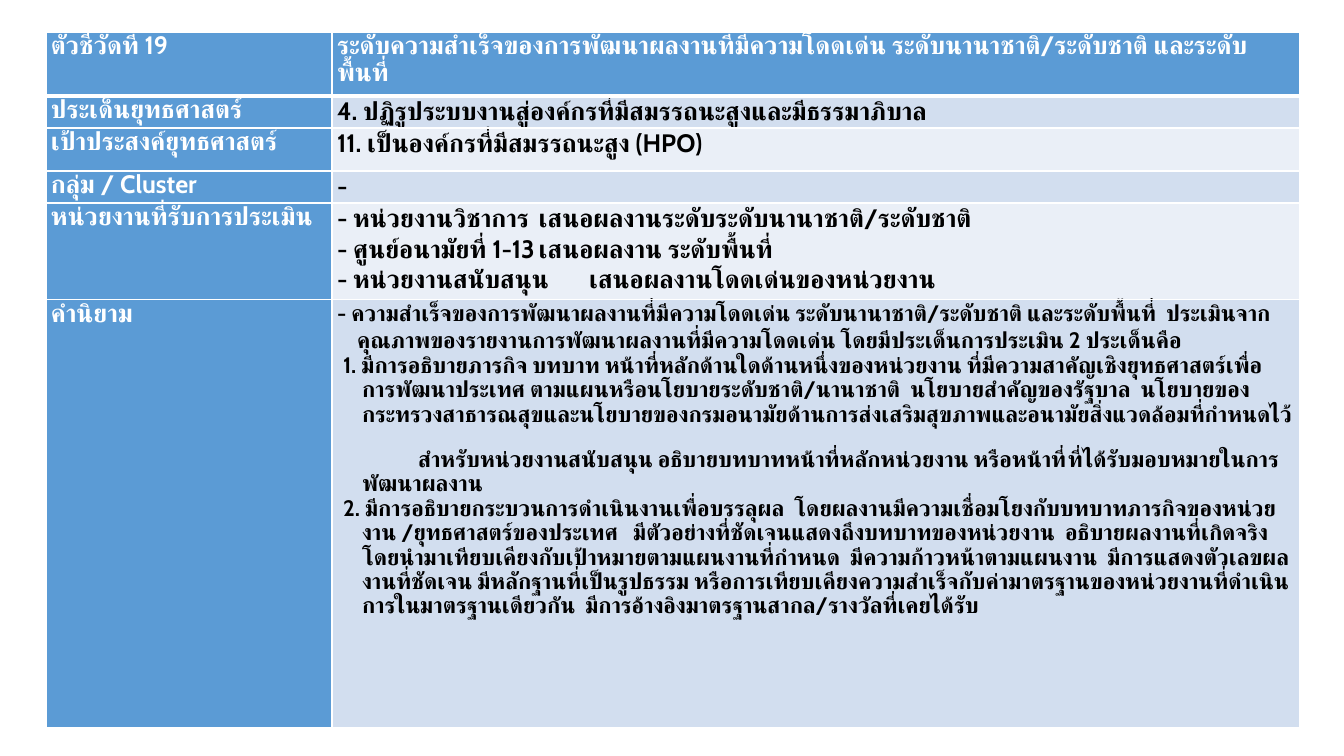
from lxml import etree
from pptx import Presentation
from pptx import util as u
from pptx.dml.color import RGBColor
from pptx.oxml.ns import qn

EMU_PER_PX = 914400 / 100.8
WHITE, BLACK, BLUE = "FFFFFF", "000000", "5B9BD5"
BANDS = ["D2DEEF", "EAEFF7"]

COLUMN_WIDTHS = [286, 967]
ROW_HEIGHTS = [64, 32, 43, 32, 97, 428]

# Each paragraph is its text, then any layout that differs from the plain one.
INDICATOR = [
    ("ตัวชี้วัดที่ 19", [
        ("ระดับความสำเร็จของการพัฒนาผลงานที่มีความโดดเด่น ระดับนานาชาติ/ระดับชาติ และระดับพื้นที่", {"line": 0.9})]),
    ("ประเด็นยุทธศาสตร์", [
        ("4. ปฏิรูประบบงานสู่องค์กรที่มีสมรรถนะสูงและมีธรรมาภิบาล", {})]),
    ("เป้าประสงค์ยุทธศาสตร์", [("11. เป็นองค์กรที่มีสมรรถนะสูง (HPO)", {})]),
    ("กลุ่ม / Cluster", [("-", {})]),
    ("หน่วยงานที่รับการประเมิน", [
        ("- หน่วยงานวิชาการ\tเสนอผลงานระดับระดับนานาชาติ/ระดับชาติ", {"tab": 228}),
        ("- ศูนย์อนามัยที่ 1-13\tเสนอผลงาน ระดับพื้นที่", {"tab": 216}),
        ("- หน่วยงานสนับสนุน\tเสนอผลงานโดดเด่นของหน่วยงาน", {"tab": 233})]),
    ("คำนิยาม", [
        ("- ความสำเร็จของการพัฒนาผลงานที่มีความโดดเด่น ระดับนานาชาติ/ระดับชาติ และระดับพื้นที่  "
         "ประเมินจากคุณภาพของรายงานการพัฒนาผลงานที่มีความโดดเด่น โดยมีประเด็นการประเมิน 2 ประเด็นคือ",
         {"size": 16, "margin": 20, "indent": -20}),
        ("1. มีการอธิบายภารกิจ บทบาท หน้าที่หลักด้านใดด้านหนึ่งของหน่วยงาน ที่มีความสาคัญเชิงยุทธศาสตร์"
         "เพื่อการพัฒนาประเทศ ตามแผนหรือนโยบายระดับชาติ/นานาชาติ  นโยบายสำคัญของรัฐบาล  "
         "นโยบายของกระทรวงสาธารณสุขและนโยบายของกรมอนามัยด้านการส่งเสริมสุขภาพ"
         "และอนามัยสิ่งแวดล้อมที่กำหนดไว้",
         {"size": 16, "margin": 25, "indent": -19, "line": 0.9}),
        ("สำหรับหน่วยงานสนับสนุน อธิบายบทบาทหน้าที่หลักหน่วยงาน หรือหน้าที่\t"
         "ที่ได้รับมอบหมายในการพัฒนาผลงาน",
         {"size": 16, "margin": 25, "indent": 56, "tab": 771, "line": 0.9, "before": 15}),
        ("2. มีการอธิบายกระบวนการดำเนินงานเพื่อบรรลุผล  โดยผลงานมีความเชื่อมโยงกับบทบาทภารกิจ"
         "ของหน่วยงาน /ยุทธศาสตร์ของประเทศ   มีตัวอย่างที่ชัดเจนแสดงถึงบทบาทของหน่วยงาน  "
         "อธิบายผลงานที่เกิดจริงโดยนำมาเทียบเคียงกับเป้าหมายตามแผนงานที่กำหนด  "
         "มีความก้าวหน้าตามแผนงาน  มีการแสดงตัวเลขผลงานที่ชัดเจน มีหลักฐานที่เป็นรูปธรรม "
         "หรือการเทียบเคียงความสำเร็จกับค่ามาตรฐานของหน่วยงานที่ดำเนินการในมาตรฐานเดียวกัน  "
         "มีการอ้างอิงมาตรฐานสากล/รางวัลที่เคยได้รับ",
         {"size": 16, "margin": 25, "indent": -19, "line": 0.9})]),
]


def px(length):
    return u.Emu(round(length * EMU_PER_PX))


def rgb(color):
    return RGBColor.from_string(color)


class SlideBuilder:
    def __init__(self, slide, font):
        self.slide = slide
        self.font = font

    def table(self, left, top, widths, heights):
        frame = self.slide.shapes.add_table(
            len(heights), len(widths), px(left), px(top), px(sum(widths)), px(sum(heights)))
        grid = frame.table
        for column, width in zip(grid.columns, widths):
            column.width = px(width)
        for row, height in zip(grid.rows, heights):
            row.height = px(height)
        return grid

    def cell(self, cell, paragraphs, fill, color, bottom=1):
        cell.margin_left = cell.margin_right = px(5)
        cell.margin_top = cell.margin_bottom = 0
        self.borders(cell, bottom)
        cell.fill.solid()
        cell.fill.fore_color.rgb = rgb(fill)
        frame = cell.text_frame
        for number, (wording, layout) in enumerate(paragraphs):
            paragraph = frame.add_paragraph() if number else frame.paragraphs[0]
            self.paragraph(paragraph, wording, color, **layout)

    def borders(self, cell, bottom):
        properties = cell._tc.get_or_add_tcPr()
        for side, points in (("L", 1), ("R", 1), ("T", 1), ("B", bottom)):
            line = etree.SubElement(properties, qn(f"a:ln{side}"), w=str(u.Pt(points)))
            fill = etree.SubElement(line, qn("a:solidFill"))
            etree.SubElement(fill, qn("a:srgbClr"), val=WHITE)

    def paragraph(self, paragraph, wording, color, size=18, margin=0, indent=0,
                  tab=None, line=None, before=0):
        """Write one paragraph; margin, indent and tab are px, before is points."""
        run = paragraph.add_run()
        run.text = wording
        paragraph.line_spacing = line
        paragraph.space_before = u.Pt(before)
        font = paragraph.font
        font.name, font.size, font.bold = self.font, u.Pt(size), True
        font.color.rgb = rgb(color)
        # Thai letters take the complex-script typeface.
        etree.SubElement(font._element, qn("a:cs"), typeface=self.font)
        properties = paragraph._p.get_or_add_pPr()
        properties.set("marL", str(px(margin)))
        properties.set("indent", str(px(indent)))
        if tab:
            stops = etree.Element(qn("a:tabLst"))
            etree.SubElement(stops, qn("a:tab"), pos=str(px(tab)), algn="l")
            properties.find(qn("a:defRPr")).addprevious(stops)


def main():
    deck = Presentation()
    deck.slide_width, deck.slide_height = u.Inches(13.33), u.Inches(7.5)
    builder = SlideBuilder(deck.slides.add_slide(deck.slide_layouts[6]), "Cabin")
    grid = builder.table(46, 32, COLUMN_WIDTHS, ROW_HEIGHTS)
    for row, (label, details) in enumerate(INDICATOR):
        header = row == 0
        bottom = 3 if header else 1
        builder.cell(grid.cell(row, 0), [(label, {"line": 0.9})], BLUE, WHITE, bottom)
        builder.cell(grid.cell(row, 1), details, BLUE if header else BANDS[(row - 1) % 2],
                     WHITE if header else BLACK, bottom)
    deck.save("out.pptx")


if __name__ == "__main__":
    main()
